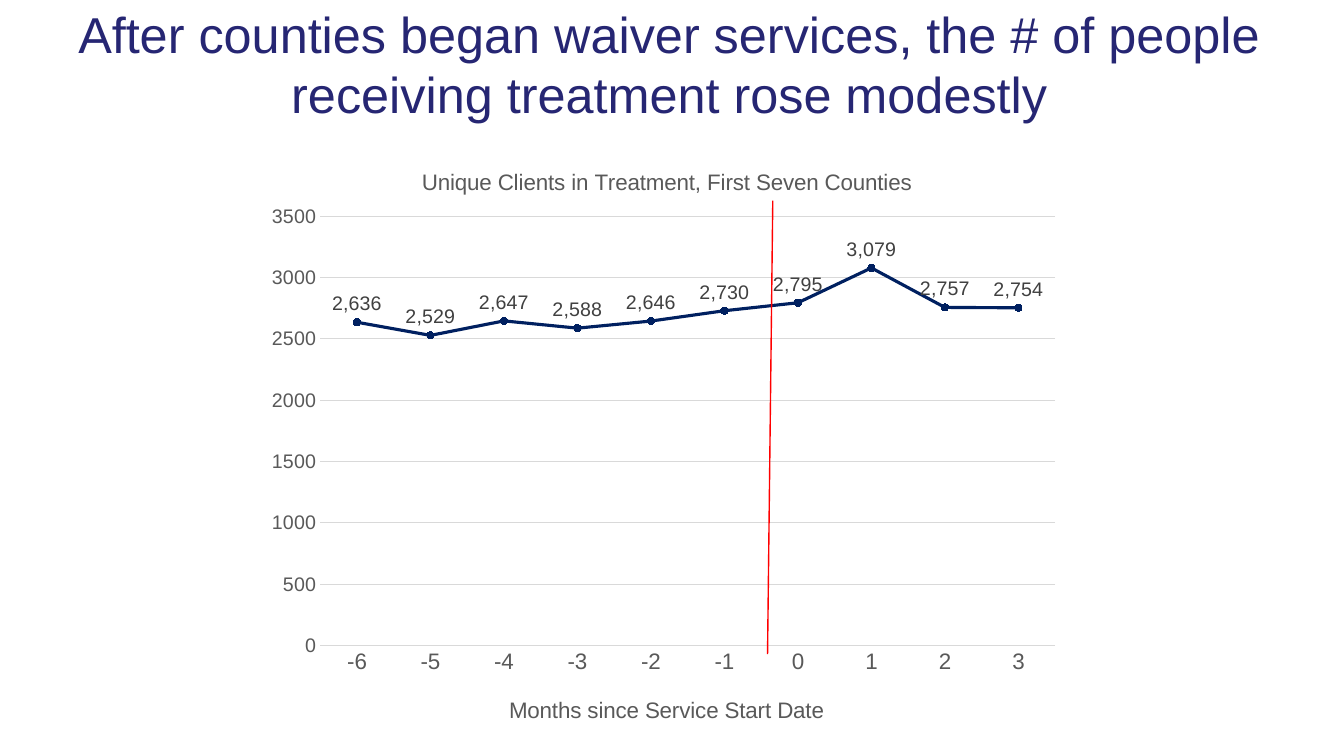
import dataclasses

import pptx
import pptx.chart.data
import pptx.dml.color
import pptx.enum.chart
import pptx.enum.shapes
import pptx.enum.text
import pptx.oxml
import pptx.oxml.ns
import pptx.util

EMU_PER_PX = 9525
qn = pptx.oxml.ns.qn


@dataclasses.dataclass(frozen=True)
class Theme:
    face: str = "Arial"
    heading: str = "262673"
    muted: str = "595959"
    label: str = "404040"
    grid: str = "D9D9D9"
    series: str = "002060"
    marker: str = "FF0000"
    heading_size: int = 36
    title_size: int = 16
    tick_size: int = 14


def px(n):
    return pptx.util.Emu(n * EMU_PER_PX)


def rgb(code):
    return pptx.dml.color.RGBColor.from_string(code)


def style_font(font, face, size, color):
    font.name = face
    font.size = pptx.util.Pt(size)
    font.bold = False
    font.color.rgb = rgb(color)


def style_line(line, color, width):
    line.color.rgb = rgb(color)
    line.width = pptx.util.Pt(width)


def write(tf, text, face, size, color, align=pptx.enum.text.PP_ALIGN.CENTER):
    p = tf.paragraphs[0]
    p.alignment = align
    r = p.add_run()
    r.text = text
    style_font(r.font, face, size, color)


def place(parent, frame, left, top, width=None, height=None):
    """Fix a chart part at slide px inside the chart frame."""
    x, y, w, h = frame
    values = {"x": (left - x) / w, "y": (top - y) / h}
    if width:
        values.update(w=width / w, h=height / h)
    target = '<c:layoutTarget val="inner"/>' if width else ""
    modes = "".join(f'<c:{k}Mode val="edge"/>' for k in "xy")
    sizes = "".join(f'<c:{k} val="{v:.4f}"/>' for k, v in values.items())
    layout = pptx.oxml.parse_xml(
        f'<c:layout {pptx.oxml.ns.nsdecls("c")}><c:manualLayout>'
        f"{target}{modes}{sizes}</c:manualLayout></c:layout>")
    for old in parent.findall(qn("c:layout")):
        parent.remove(old)
    tx = parent.find(qn("c:tx"))
    parent.insert(0 if tx is None else 1, layout)


class Deck:
    def __init__(self, theme):
        self.theme = theme
        self.prs = pptx.Presentation()
        self.prs.slide_width, self.prs.slide_height = px(1280), px(720)
        self.s = self.prs.slides.add_slide(self.prs.slide_layouts[6])

    def heading(self, text, *box):
        t = self.theme
        tf = self.s.shapes.add_textbox(*map(px, box)).text_frame
        tf.word_wrap = True
        tf.vertical_anchor = pptx.enum.text.MSO_ANCHOR.MIDDLE
        write(tf, text, face=t.face, size=t.heading_size, color=t.heading)

    def line_chart(self, counts, frame):
        t = self.theme
        data = pptx.chart.data.CategoryChartData(number_format="#,##0")
        data.categories = [str(month) for month in counts]
        data.add_series("Series 1", counts.values())
        kind = pptx.enum.chart.XL_CHART_TYPE.LINE_MARKERS
        chart = self.s.shapes.add_chart(kind, *map(px, frame), data).chart
        chart.has_legend = False
        style_font(chart.font, t.face, t.tick_size, t.muted)

        plot = chart.plots[0]
        plot.vary_by_categories = False
        plot.has_data_labels = True
        labels = plot.data_labels
        labels.show_value = True
        labels.number_format = "#,##0"
        labels.number_format_is_linked = False
        labels.position = pptx.enum.chart.XL_LABEL_POSITION.ABOVE
        style_font(labels.font, t.face, t.tick_size, t.label)

        series = plot.series[0]
        series.smooth = False
        style_line(series.format.line, t.series, 2.25)
        series.marker.style = pptx.enum.chart.XL_MARKER_STYLE.CIRCLE
        series.marker.size = 5
        series.marker.format.fill.solid()
        series.marker.format.fill.fore_color.rgb = rgb(t.series)
        style_line(series.marker.format.line, t.series, 0.75)
        return chart

    def axes(self, chart, top, step):
        t = self.theme
        months, clients = chart.category_axis, chart.value_axis
        for axis, size in ((months, t.title_size), (clients, t.tick_size)):
            axis.major_tick_mark = pptx.enum.chart.XL_TICK_MARK.NONE
            axis.minor_tick_mark = pptx.enum.chart.XL_TICK_MARK.NONE
            style_font(axis.tick_labels.font, t.face, size, t.muted)
        months.has_major_gridlines = False
        style_line(months.format.line, t.grid, 0.75)
        clients.minimum_scale, clients.maximum_scale = 0, top
        clients.major_unit = step
        clients.tick_labels.number_format = "General"
        clients.tick_labels.number_format_is_linked = False
        clients.format.line.fill.background()
        style_line(clients.major_gridlines.format.line, t.grid, 0.75)

    def chart_title(self, owner, text, frame, left, top):
        """Title a chart or an axis."""
        t = self.theme
        owner.has_title = True
        title = getattr(owner, "chart_title", None) or owner.axis_title
        write(title.text_frame, text, face=t.face, size=t.title_size, color=t.muted)
        place(title.element if hasattr(title, "element") else title._element, frame, left, top)

    def line(self, *ends):
        straight = pptx.enum.shapes.MSO_CONNECTOR.STRAIGHT
        sp = self.s.shapes.add_connector(straight, *map(px, ends))
        style_line(sp.line, self.theme.marker, 1)
        sp.element.spPr.append(pptx.oxml.parse_xml(
            f'<a:effectLst {pptx.oxml.ns.nsdecls("a")}/>'))


def main():
    counts = {-6: 2636, -5: 2529, -4: 2647, -3: 2588, -2: 2646,
              -1: 2730, 0: 2795, 1: 3079, 2: 2757, 3: 2754}
    frame = (243, 135, 777, 570)
    deck = Deck(Theme())
    deck.heading("After counties began waiver services, the # of people "
                 "receiving treatment rose modestly", 8, 0, 1259, 121)
    chart = deck.line_chart(counts, frame)
    deck.axes(chart, top=3500, step=500)
    deck.chart_title(chart, "Unique Clients in Treatment, First Seven Counties",
                     frame, 398, 156)
    deck.chart_title(chart.category_axis, "Months since Service Start Date",
                     frame, 481, 659)
    place(chart.element.find(".//" + qn("c:plotArea")), frame, 305, 206, 700, 409)
    deck.line(731, 623, 736, 191)
    deck.prs.save("out.pptx")


if __name__ == "__main__":
    main()
